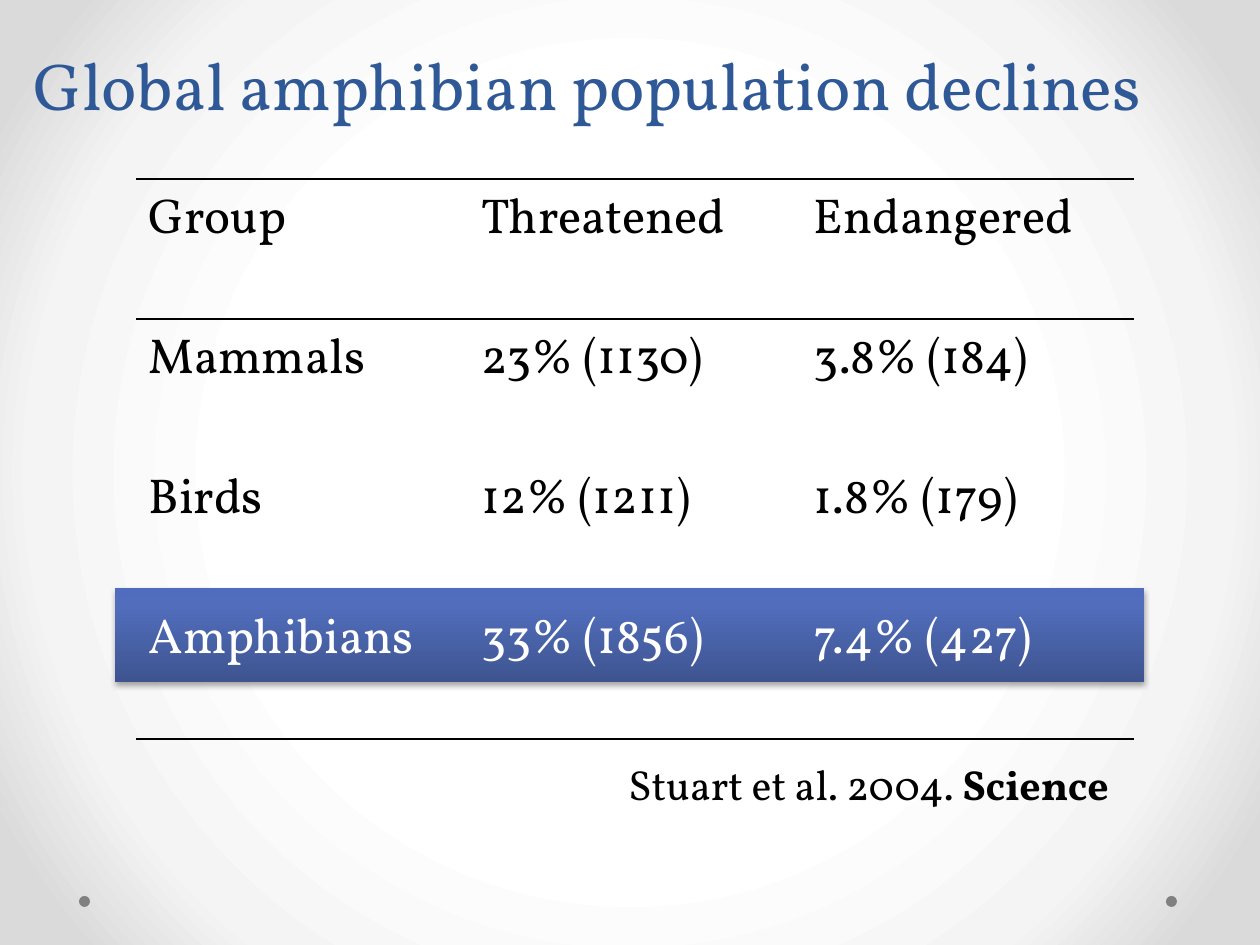
"""Build the slide on global amphibian population declines."""
from pptx import Presentation
from pptx.dml.color import RGBColor
from pptx.enum.shapes import MSO_CONNECTOR as Connector, MSO_SHAPE as Shape
from pptx.oxml import parse_xml
from pptx.oxml.ns import nsdecls
from pptx.util import Pt

TITLE = "Global amphibian population declines"
ROWS = [
    ("Group", "Threatened", "Endangered"),
    ("Mammals", "23% (1130)", "3.8% (184)"),
    ("Birds", "12% (1211)", "1.8% (179)"),
    ("Amphibians", "33% (1856)", "7.4% (427)"),
]
RULED_ROWS = (0, 1, len(ROWS))
SOURCE, JOURNAL = "Stuart et al. 2004. ", "Science"

FONT = "Vollkorn"
BLACK = RGBColor(0x00, 0x00, 0x00)
WHITE = RGBColor(0xFF, 0xFF, 0xFF)
BLUE = RGBColor(0x2F, 0x58, 0x97)
GRAY = RGBColor(0x80, 0x80, 0x80)
PAGE_STOPS = [
    (50, WHITE),
    (76, RGBColor(0xF4, 0xF4, 0xF4)),
    (92, RGBColor(0xDA, 0xDA, 0xDA)),
]
BAND_STOPS = [
    (0, RGBColor(0x3E, 0x54, 0x90)),
    (80, RGBColor(0x51, 0x6D, 0xBB)),
    (100, RGBColor(0x4F, 0x6C, 0xBE)),
]
RADIAL = '<a:path path="circle"><a:fillToRect l="50000" t="50000" r="50000" b="50000"/></a:path>'
UPWARD = '<a:lin ang="16200000" scaled="0"/>'

TABLE_LEFT, TABLE_TOP, TABLE_WIDTH, ROW, CELL_TOP = 136, 179, 998, 140, 8
DOT_LEFTS, DOT_TOP, DOT = (79, 1166), 896, 11


def px(*lengths):
    """Turn pixel lengths into EMU."""
    return [round(length * 914400 / 126) for length in lengths]


def gradient(stops, direction):
    """Return a gradient fill as XML text."""
    marks = "".join(
        f'<a:gs pos="{place * 1000}"><a:srgbClr val="{color}"/></a:gs>'
        for place, color in stops
    )
    return f'<a:gradFill {nsdecls("a")} rotWithShape="1"><a:gsLst>{marks}</a:gsLst>{direction}</a:gradFill>'


def add_span(para, text, size=28, color=BLACK, bold=False):
    """Add a formatted run to a paragraph."""
    span = para.add_run()
    span.text = text
    font = span.font
    font.name, font.size, font.bold = FONT, Pt(size), bold
    font.color.rgb = color


def add_label(page, *frame):
    """Add an unwrapped text box and return its paragraph."""
    box = page.shapes.add_textbox(*px(*frame))
    box.text_frame.word_wrap = False
    return box.text_frame.paragraphs[0]


def add_plain(page, kind, *frame):
    """Add a shape without line or shadow."""
    shape = page.shapes.add_shape(kind, *px(*frame))
    shape.shadow.inherit = False
    shape.line.fill.background()
    return shape


def add_band(page):
    """Add the shaded band behind the amphibian row."""
    band = add_plain(page, Shape.RECTANGLE, 115, 588, 1029, 94)
    band.fill.background()
    properties = band._element.spPr
    properties.replace(properties.find("{*}noFill"), parse_xml(gradient(BAND_STOPS, UPWARD)))
    properties.find("{*}effectLst").append(parse_xml(
        f'<a:outerShdw {nsdecls("a")} blurRad="{Pt(3.1)}" dist="{Pt(1.8)}" dir="5400000" rotWithShape="0">'
        f'<a:srgbClr val="{BLACK}"><a:alpha val="35000"/></a:srgbClr></a:outerShdw>'
    ))


def clear_borders(cell):
    """Remove the styled borders of a cell."""
    properties = cell._tc.get_or_add_tcPr()
    for place, side in enumerate("LRTB"):
        properties.insert(place, parse_xml(f'<a:ln{side} {nsdecls("a")}><a:noFill/></a:ln{side}>'))


def add_status_table(page):
    """Add the table of threatened and endangered species."""
    frame = px(TABLE_LEFT, TABLE_TOP, TABLE_WIDTH, ROW * len(ROWS))
    table = page.shapes.add_table(len(ROWS), len(ROWS[0]), *frame).table
    table.first_row = table.horz_banding = False
    for r, values in enumerate(ROWS):
        color = WHITE if r == len(ROWS) - 1 else BLACK
        for c, value in enumerate(values):
            cell = table.cell(r, c)
            cell.fill.background()
            cell.margin_top, = px(CELL_TOP)
            clear_borders(cell)
            add_span(cell.text_frame.paragraphs[0], value, color=color)


def add_rule(page, row):
    """Draw the line above a table row."""
    y = TABLE_TOP + row * ROW
    ends = px(TABLE_LEFT, y, TABLE_LEFT + TABLE_WIDTH, y)
    rule = page.shapes.add_connector(Connector.STRAIGHT, *ends)
    rule.line.width = Pt(1)
    rule.line.color.rgb = BLACK
    rule._element.spPr.append(parse_xml(f'<a:effectLst {nsdecls("a")}/>'))


def main():
    """Build and save the deck."""
    deck = Presentation()
    deck.slide_width, deck.slide_height = px(1260, 945)
    page = deck.slides.add_slide(deck.slide_layouts[6])
    page.element.cSld.insert(0, parse_xml(
        f'<p:bg {nsdecls("p", "a")}><p:bgPr>{gradient(PAGE_STOPS, RADIAL)}<a:effectLst/></p:bgPr></p:bg>'
    ))
    for left in DOT_LEFTS:
        dot = add_plain(page, Shape.OVAL, left, DOT_TOP, DOT, DOT)
        dot.fill.solid()
        dot.fill.fore_color.rgb = GRAY
    add_band(page)
    add_status_table(page)
    for row in RULED_ROWS:
        add_rule(page, row)
    credit = add_label(page, 616, 752, 617, 63)
    add_span(credit, SOURCE, size=24)
    add_span(credit, JOURNAL, size=24, bold=True)
    add_span(add_label(page, 21, 38, 1164, 93), TITLE, size=38, color=BLUE)
    deck.save("out.pptx")


if __name__ == "__main__":
    main()
